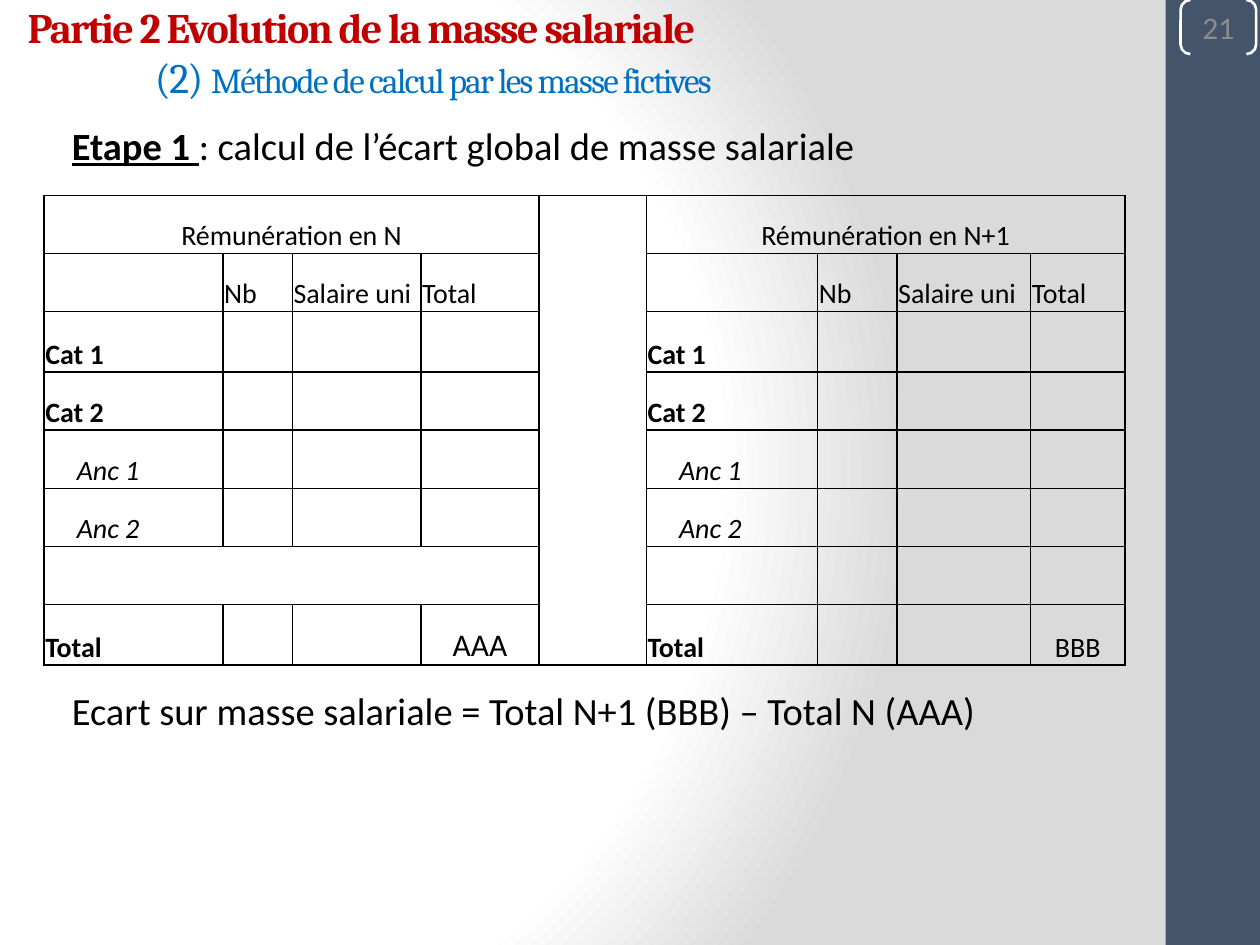
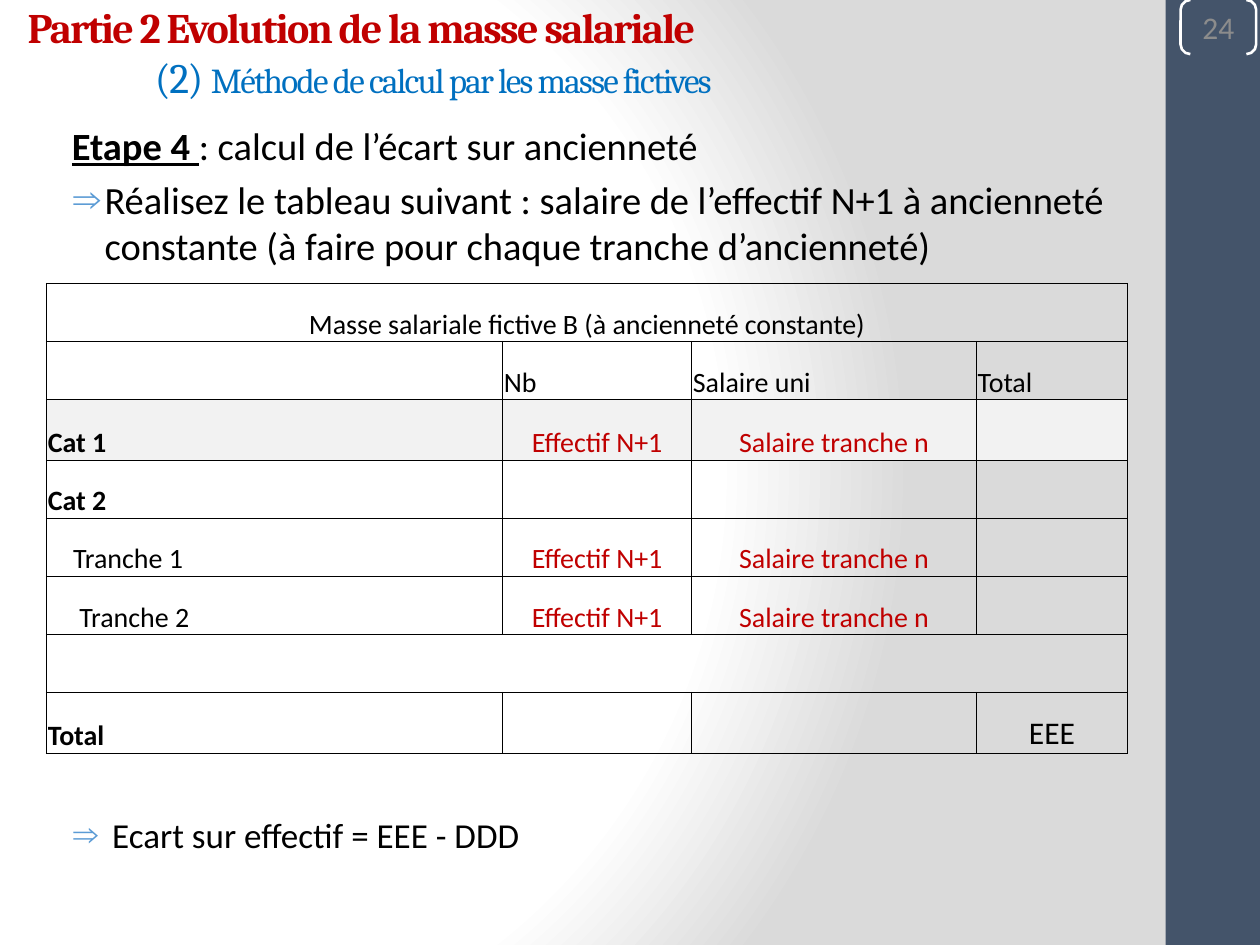
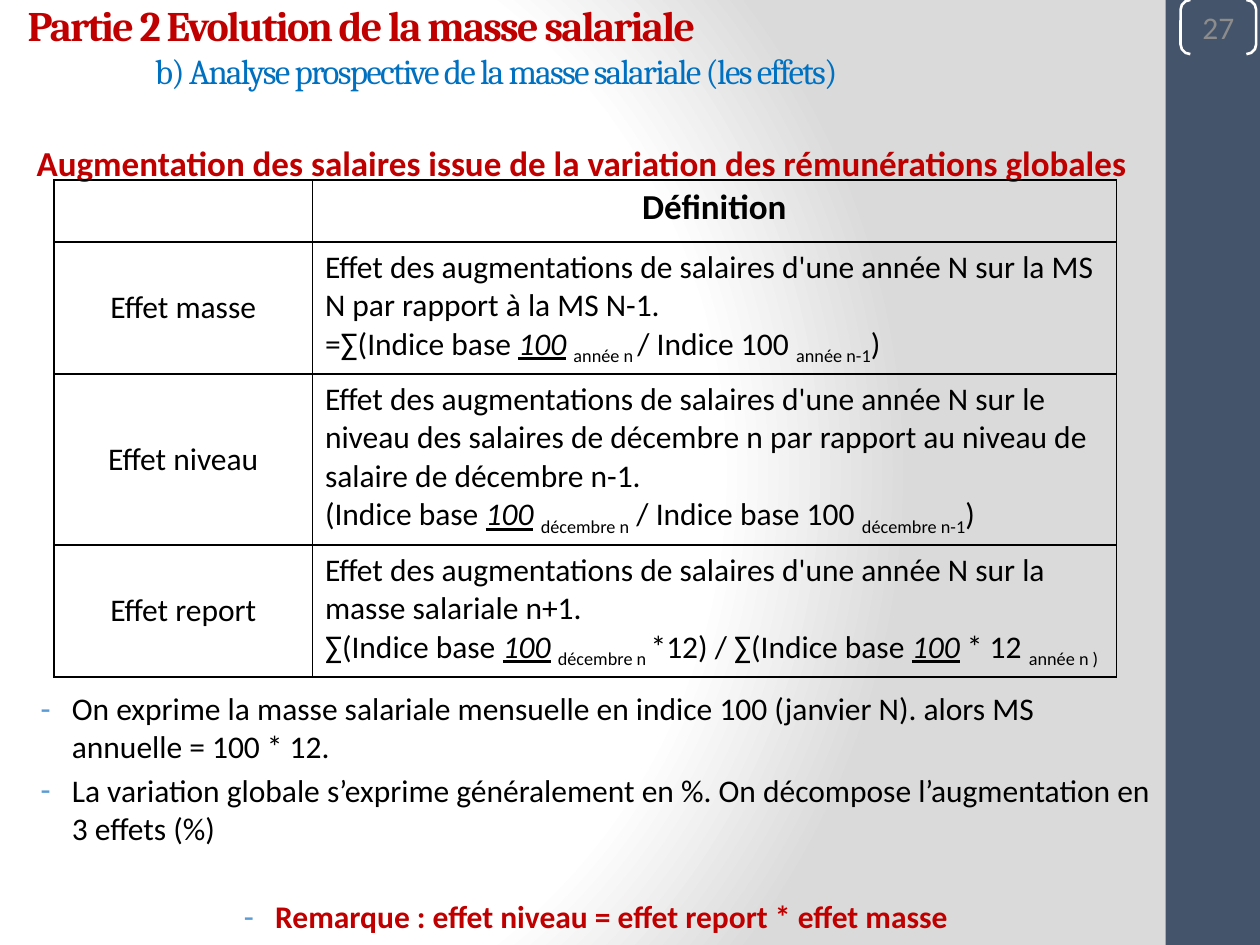
from dataclasses import dataclass
from lxml.etree import SubElement as Sub
from pptx import Presentation
from pptx.dml.color import RGBColor as Rgb
from pptx.enum.shapes import MSO_SHAPE as Form
from pptx.enum.text import MSO_ANCHOR as Anchor, MSO_AUTO_SIZE as Fit, PP_ALIGN as Align
from pptx.oxml import parse_xml
from pptx.oxml.ns import nsdecls, qn
from pptx.util import Inches, Pt


@dataclass(frozen=True)
class Theme:
    head: str = "Cambria"
    body: str = "Calibri"
    ink: str = "000000"
    red: str = "C00000"
    blue: str = "0070C0"
    mark: str = "5B9BD5"
    band: str = "44546A"
    page: str = "8C8C8C"
    white: str = "FFFFFF"
    grey: str = "DADADA"
    pale: str = "F2F2F2"
    title: int = 24
    lead: int = 22
    large: int = 20
    text: int = 18
    small: int = 16


@dataclass(frozen=True)
class Box:
    x: float
    y: float
    w: float
    h: float

    def spans(self):
        return [Inches(n * UNIT) for n in (self.x, self.y, self.w, self.h)]


T = Theme()
WIDE, HIGH, COLS = 10, 7.5, 100
UNIT = WIDE / COLS
BAND = Box(92.5, 0, 7.5, 75)
PAGE = Box(93.7, 0, 6, 4.3)
TITLE = Box(0, 1, 83.3, 6.2)
BODY = Box(3.5, 9.2, 85.8, 47.6)
ROWS = [0.46, 0.46, 0.48, 0.46, 0.46, 0.46, 0.46, 0.48]
KINDS = {
    "step": {"bold": True, "underline": True},
    "base": {"italic": True, "underline": True},
    "big": {"size": Pt(T.title)},
}
PART = "Partie 2 Evolution de la masse salariale"
METHOD = [("(2) ", "big"), "Méthode de calcul par les masse fictives"]


def place(shape, box):
    shape.left, shape.top, shape.width, shape.height = box.spans()


def indent(par, left, hang=0, mark=None):
    prop = par._p.get_or_add_pPr()
    prop.set("marL", str(Inches(left)))
    prop.set("indent", str(Inches(hang)))
    if mark:
        tint = Sub(prop, qn("a:buClr"))
        Sub(tint, qn("a:srgbClr")).set("val", T.mark)
        Sub(prop, qn("a:buChar")).set("char", mark)
    else:
        Sub(prop, qn("a:buNone"))


def write(par, parts, size=T.text, color=T.ink, bold=False, italic=False,
          face=T.body, align=Align.LEFT, tight=False):
    par.alignment = align
    font = par.font
    font.name, font.size, font.bold, font.italic = face, Pt(size), bold, italic
    font.color.rgb = Rgb.from_string(color)
    for part in [parts] if isinstance(parts, str) else parts:
        text, kind = (part, None) if isinstance(part, str) else part
        run = par.add_run()
        run.text = text
        for key, value in KINDS.get(kind, {}).items():
            setattr(run.font, key, value)
        if kind == "sub":
            run._r.get_or_add_rPr().set("baseline", "-25000")
        if tight:
            run._r.get_or_add_rPr().set("spc", "-100")


def draw_title(slide, box, second):
    shape = slide.shapes.title
    place(shape, box)
    frame = shape.text_frame
    frame.auto_size, frame.vertical_anchor = Fit.NONE, Anchor.MIDDLE
    first, other = frame.paragraphs[0], frame.add_paragraph()
    indent(first, 0.12)
    write(first, PART, T.title, T.red, True, face=T.head, tight=True)
    indent(other, 1.13)
    write(other, second, T.large, T.blue, face=T.head, tight=True)


def draw_list(slide, index, box, items):
    shape = slide.placeholders[index]
    place(shape, box)
    frame = shape.text_frame
    frame.auto_size = Fit.NONE
    for spot, (shift, parts, look) in enumerate(items):
        par = frame.add_paragraph() if spot else frame.paragraphs[0]
        if not spot:
            par.space_before = Pt(0)
        indent(par, *shift)
        write(par, parts, **look)


def draw_page(slide, box, number):
    shape = slide.shapes.add_shape(Form.DOUBLE_BRACKET, *box.spans())
    shape.shadow.inherit = False
    shape.adjustments[0] = 0.18
    shape.fill.background()
    shape.line.color.rgb = Rgb.from_string(T.white)
    shape.line.width = Pt(1.5)
    frame = shape.text_frame
    frame.margin_left = frame.margin_right = frame.margin_top = frame.margin_bottom = 0
    frame.vertical_anchor = Anchor.MIDDLE
    write(frame.paragraphs[0], number, color=T.page, align=Align.CENTER)


def add_grid(slide, box, cols, rows):
    frame = slide.shapes.add_table(len(rows), len(cols), *box.spans())
    table = frame.table
    table.first_row = table.horz_banding = False
    for col, share in zip(table.columns, cols):
        col.width = int(Inches(box.w * UNIT) * share / sum(cols))
    for row, share in zip(table.rows, rows):
        row.height = int(Inches(box.h * UNIT) * share / sum(rows))
    for cell in table.iter_cells():
        prop = cell._tc.get_or_add_tcPr()
        for side in ("lnL", "lnR", "lnT", "lnB"):
            line = Sub(prop, qn(f"a:{side}"))
            line.set("w", str(Pt(1)))
            fill = Sub(line, qn("a:solidFill"))
            Sub(fill, qn("a:srgbClr")).set("val", T.ink)
        cell.fill.background()
    return table


def put(table, row, col, text, size=T.small, left=0, **look):
    cell = table.cell(row, col)
    cell.vertical_anchor = Anchor.BOTTOM
    cell.margin_left = cell.margin_right = cell.margin_top = Inches(0.01)
    cell.margin_bottom = 0
    par = cell.text_frame.paragraphs[0]
    if left:
        indent(par, left)
    write(par, text, size, **look)


def fill_pay(table, col, head, subs, total, size=T.text, slant=False, merge=True):
    table.cell(0, col).merge(table.cell(0, col + 3))
    put(table, 0, col, head, align=Align.CENTER)
    for step, text in enumerate(("Nb", "Salaire uni", "Total"), 1):
        put(table, 1, col + step, text)
    for row, text in ((2, "Cat 1"), (3, "Cat 2"), (7, "Total")):
        put(table, row, col, text, bold=True)
    for row, (text, left) in enumerate(subs, 4):
        put(table, row, col, text, left=left, italic=slant)
    if merge:
        table.cell(6, col).merge(table.cell(6, col + 3))
    put(table, 7, col + 3, total, size, align=Align.CENTER)


def start(deck, number, second, title=TITLE):
    slide = deck.slides.add_slide(deck.slide_layouts[3])
    draw_title(slide, title, second)
    draw_page(slide, PAGE, number)
    return slide


def step_line(step, text):
    return (0.12,), [(f"{step} ", "step"), text], {"size": T.lead}


def draw_gap(deck):
    slide = start(deck, "21", METHOD)
    draw_list(slide, 1, BODY, [step_line("Etape 1", ": calcul de l’écart global de masse salariale")])
    draw_list(slide, 2, Box(BODY.x, 54, BODY.w, 20), [
        ((0.12,), "Ecart sur masse salariale = Total N+1 (BBB) – Total N (AAA)", {"size": T.lead}),
    ])
    cols = [1.42, 0.55, 1.02, 0.94, 0.85, 1.36, 0.63, 1.06, 0.75]
    table = add_grid(slide, Box(BODY.x, 15.5, BODY.w, 37.3), cols, ROWS)
    table.cell(0, 4).merge(table.cell(7, 4))
    subs = [("Anc 1", 0.25), ("Anc 2", 0.25)]
    fill_pay(table, 0, "Rémunération en N", subs, "AAA", slant=True)
    fill_pay(table, 5, "Rémunération en N+1", subs, "BBB", T.small, True, False)


def draw_age(deck):
    slide = start(deck, "24", METHOD)
    draw_list(slide, 1, BODY, [
        step_line("Etape 4", ": calcul de l’écart sur ancienneté"),
        ((0.38, -0.25, "⇒"), "Réalisez le tableau suivant : salaire de l’effectif N+1 à ancienneté "
         "constante (à faire pour chaque tranche d’ancienneté)", {"size": T.lead}),
    ])
    draw_list(slide, 2, Box(BODY.x, 64.1, BODY.w, 8), [
        ((0.44, -0.31, "⇒"), "Ecart sur effectif = EEE - DDD", {"size": T.large}),
    ])
    table = add_grid(slide, Box(3.7, 22.5, BODY.w, 37.3), [3.62, 1.5, 2.26, 1.2], ROWS)
    fill_pay(table, 0, "Masse salariale fictive B (à ancienneté constante)",
             [("Tranche 1", 0.2), ("Tranche 2", 0.25)], "EEE")
    for row in (2, 4, 5):
        for col, text in enumerate(("Effectif N+1", "Salaire tranche n"), 1):
            put(table, row, col, text, color=T.red, align=Align.CENTER)
    for cell in table.rows[2].cells:
        cell.fill.solid()
        cell.fill.fore_color.rgb = Rgb.from_string(T.pale)


def draw_terms(deck):
    slide = start(deck, "27", "b) Analyse prospective de la masse salariale (les effets)",
                  Box(0, 0.5, 83.3, 6.2))
    draw_list(slide, 1, Box(0.7, 10.7, 91.5, 61.4), [
        ((0.12,), "Augmentation des salaires issue de la variation des rémunérations globales",
         {"size": T.large, "color": T.red, "bold": True}),
    ])
    dash = (0.38, -0.25, "-")
    draw_list(slide, 2, Box(0.9, 54.2, 91.5, 20.8), [
        (dash, "On exprime la masse salariale mensuelle en indice 100 (janvier N). "
         "alors MS annuelle = 100 * 12.", {}),
        (dash, "La variation globale s’exprime généralement en %. "
         "On décompose l’augmentation en 3 effets (%)", {}),
        (dash, "Remarque : effet niveau = effet report * effet masse",
         {"color": T.red, "bold": True, "align": Align.CENTER}),
    ])
    slide.placeholders[2].text_frame.paragraphs[-1].space_before = Pt(29)
    table = add_grid(slide, Box(4.3, 14.3, 84.3, 39.2), [2.05, 6.38], [0.49, 1.05, 1.34, 1.04])
    write(table.cell(0, 1).text_frame.paragraphs[0], "Définition", T.large, bold=True, align=Align.CENTER)
    base = ("100", "base")
    lead = "Effet des augmentations de salaires d'une année N sur "
    terms = [
        ("Effet masse", "la MS N par rapport à la MS N-1.",
         ["=∑(Indice base ", base, " ", ("année n ", "sub"), "/ Indice 100 ", ("année n-1", "sub"), ")"]),
        ("Effet niveau", "le niveau des salaires de décembre n par rapport au niveau de salaire de décembre n-1.",
         ["(Indice base ", base, " ", ("décembre n", "sub"), " / Indice base 100 ", ("décembre n-1", "sub"), ")"]),
        ("Effet report", "la masse salariale n+1.",
         ["∑(Indice base ", base, " ", ("décembre n ", "sub"), "*12) / ∑(Indice base ", base,
          " * 12 ", ("année n )", "sub")]),
    ]
    for row, (name, text, sums) in enumerate(terms, 1):
        left = table.cell(row, 0)
        left.vertical_anchor = Anchor.MIDDLE
        write(left.text_frame.paragraphs[0], name, align=Align.CENTER)
        frame = table.cell(row, 1).text_frame
        write(frame.paragraphs[0], lead + text)
        write(frame.add_paragraph(), sums)


def set_master(deck):
    master = deck.slide_master
    fill = master.background.fill
    fill.solid()
    old = master.element.find(".//" + qn("p:bgPr")).find(qn("a:solidFill"))
    stops = "".join(f'<a:gs pos="{pos}000"><a:srgbClr val="{color}"/></a:gs>'
                    for pos, color in ((0, T.white), (75, T.white), (100, T.grey)))
    old.getparent().replace(old, parse_xml(
        f'<a:gradFill {nsdecls("a")} rotWithShape="1"><a:gsLst>{stops}</a:gsLst>'
        '<a:path path="circle"><a:fillToRect l="20000" t="50000" r="100000" b="50000"/>'
        '</a:path></a:gradFill>'))
    band = deck.slides[0].shapes.add_shape(Form.RECTANGLE, *BAND.spans())
    band.shadow.inherit = False
    band.fill.solid()
    band.fill.fore_color.rgb = Rgb.from_string(T.band)
    band.line.fill.background()
    band.element.find(".//" + qn("p:cNvPr")).set("id", "20")
    master.element.find(".//" + qn("p:spTree")).append(band.element)


def main():
    deck = Presentation()
    deck.slide_width, deck.slide_height = Inches(WIDE), Inches(HIGH)
    for draw in (draw_gap, draw_age, draw_terms):
        draw(deck)
    set_master(deck)
    deck.save("out.pptx")


if __name__ == "__main__":
    main()
